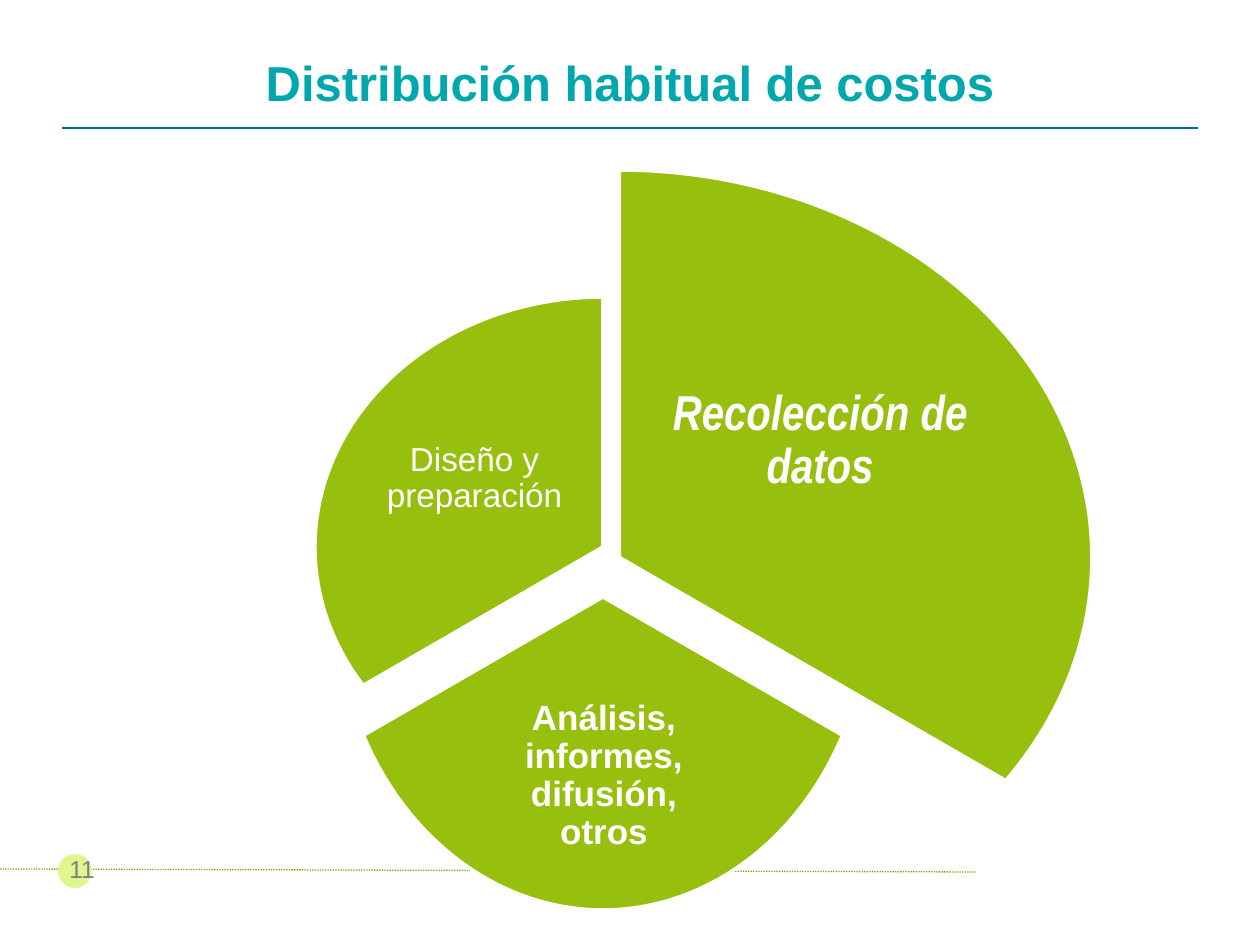
from lxml.etree import SubElement
from pptx import Presentation
from pptx.dml.color import RGBColor
from pptx.enum.dml import MSO_LINE
from pptx.enum.shapes import MSO_CONNECTOR, MSO_SHAPE
from pptx.enum.text import MSO_ANCHOR, PP_ALIGN
from pptx.oxml.ns import qn
from pptx.util import Emu, Pt

EMU_PER_PX = 914400 / 126
TITLE_ONLY = 5
WHITE = "FFFFFF"
GREEN = "97BF0D"

# Slice: box, start and end angle, label box, inset, label, size, font, bold, italic
SLICES = [
    ((147, 170, 945, 775), (270, 30), (660, 312, 320, 258), 5,
     "Recolección de datos", 28, "Arial Narrow", True, True),
    ((336, 284, 534, 626), (30, 150), (483, 679, 242, 194), 4,
     "Análisis, informes, difusión, otros", 20, "Arial", True, False),
    ((315, 297, 576, 500), (150, 270), (377, 396, 195, 166), 4,
     "Diseño y preparación", 19, "Arial", False, False),
]


def px(length):
    return Emu(round(length * EMU_PER_PX))


def rgb(hex_code):
    return RGBColor.from_string(hex_code)


def format_text(frame, text, size, color, font="Arial", bold=False,
                italic=False, align=PP_ALIGN.LEFT):
    frame.text = text
    frame.word_wrap = True
    frame.vertical_anchor = MSO_ANCHOR.MIDDLE
    paragraph = frame.paragraphs[0]
    paragraph.alignment = align
    run_font = paragraph.runs[0].font
    run_font.name, run_font.size = font, Pt(size)
    run_font.bold, run_font.italic = bold, italic
    run_font.color.rgb = rgb(color)
    return paragraph


def add_rule(shapes, start, end, color, dash=None):
    rule = shapes.add_connector(MSO_CONNECTOR.STRAIGHT,
                                *map(px, start), *map(px, end))
    rule.line.color.rgb = rgb(color)
    rule.line.width = Pt(0.75)
    if dash:
        rule.line.dash_style = dash
    SubElement(rule._element.spPr, qn("a:effectLst"))


def add_filled(shapes, preset, box, color):
    shape = shapes.add_shape(preset, *map(px, box))
    shape.shadow.inherit = False
    shape.fill.solid()
    shape.fill.fore_color.rgb = rgb(color)
    shape.line.fill.background()
    return shape


def add_slice(shapes, box, angles, label_box, inset, label, size, font, bold, italic):
    wedge = add_filled(shapes, MSO_SHAPE.PIE, box, GREEN)
    for index, degrees in enumerate(angles):
        wedge.adjustments[index] = degrees * 0.6  # 60000 units a degree / 100000
    wedge.line.color.rgb = rgb(WHITE)
    wedge.line.width = Pt(2)

    frame = shapes.add_textbox(*map(px, label_box)).text_frame
    frame.margin_left = frame.margin_right = px(inset)
    frame.margin_top = frame.margin_bottom = px(inset)
    paragraph = format_text(frame, label, size, WHITE, font, bold, italic,
                            PP_ALIGN.CENTER)
    paragraph.line_spacing = 0.9


def add_title(slide):
    title = slide.shapes.title
    title.left, title.top, title.width, title.height = map(px, (63, 38, 1134, 88))
    format_text(title.text_frame, "Distribución habitual de costos", 28, "00A7AC",
                bold=True, align=PP_ALIGN.CENTER)


def add_page_number(shapes):
    add_filled(shapes, MSO_SHAPE.OVAL, (58, 854, 34, 34), "DFF78C")
    number = shapes.add_textbox(*map(px, (57, 844, 294, 50)))
    format_text(number.text_frame, "11", 14, "808080")


def main():
    prs = Presentation()
    prs.slide_width, prs.slide_height = px(1260), px(945)
    slide = prs.slides.add_slide(prs.slide_layouts[TITLE_ONLY])

    # Title, rules and page number
    add_title(slide)
    add_rule(slide.shapes, (0, 869), (976, 872), "81A408", MSO_LINE.ROUND_DOT)
    add_rule(slide.shapes, (62, 128), (1198, 128), "006E89")
    add_page_number(slide.shapes)

    # Cost slices
    costs = slide.shapes.add_group_shape()
    for cost_slice in SLICES:
        add_slice(costs.shapes, *cost_slice)

    prs.save("out.pptx")


if __name__ == "__main__":
    main()
